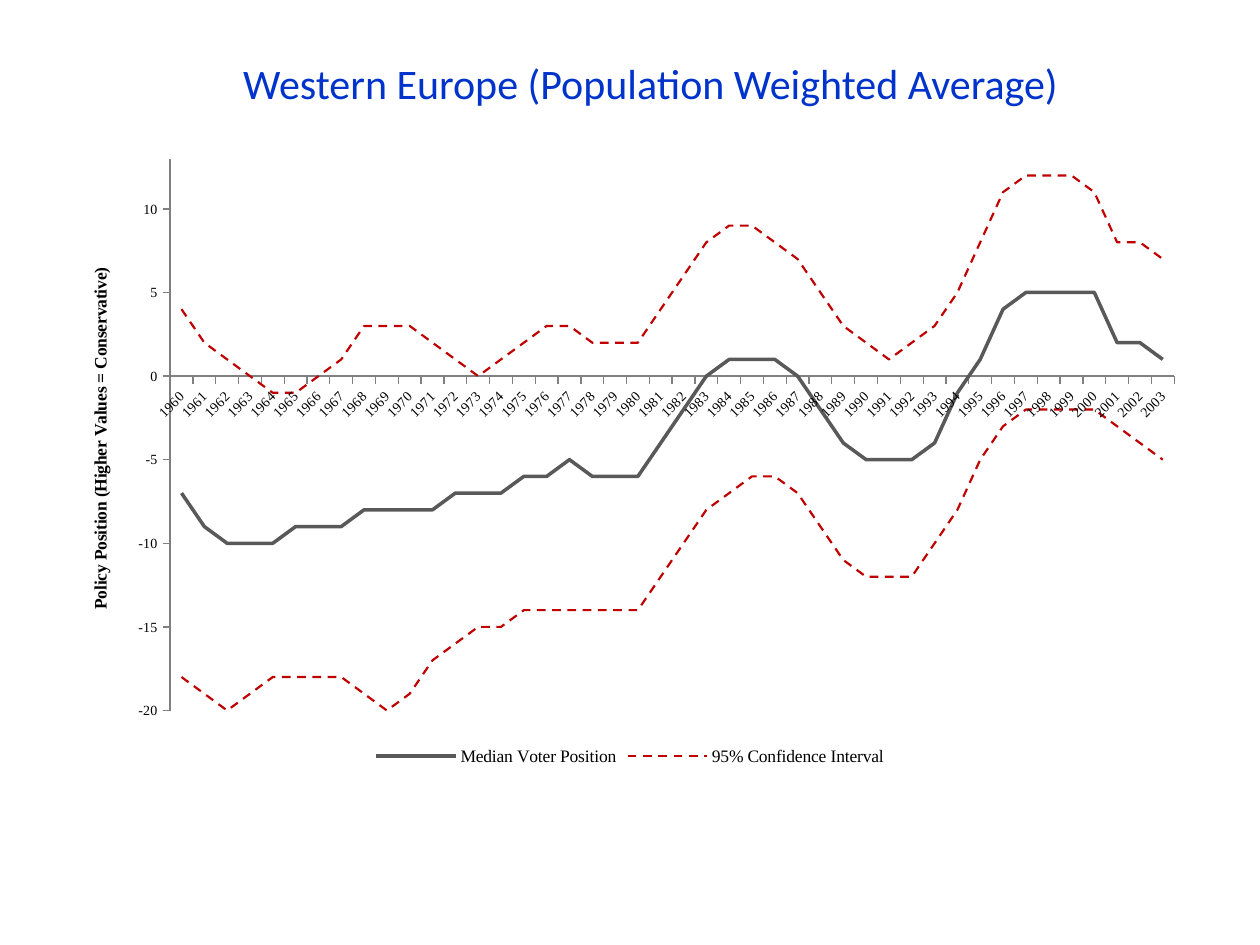
from pptx import Presentation
from pptx.chart.data import CategoryChartData
from pptx.dml.color import RGBColor
from pptx.enum.chart import XL_CHART_TYPE, XL_LEGEND_POSITION, XL_MARKER_STYLE, XL_TICK_MARK
from pptx.enum.dml import MSO_LINE
from pptx.enum.text import MSO_ANCHOR, PP_ALIGN
from pptx.oxml import parse_xml
from pptx.oxml.ns import nsdecls
from pptx.util import Inches, Pt

COLORS = {"title": "0033CC", "median": "595959", "interval": "C00000",
          "axis": "808080", "grid": "FFFFFF", "text": "000000"}
CHART_W, CHART_H = 9, 4.95
YEARS = [str(year) for year in range(1960, 2004)]
MEDIAN = [-7, -9, -10, -10, -10, -9, -9, -9, -8, -8, -8,
          -8, -7, -7, -7, -6, -6, -5, -6, -6, -6, -4,
          -2, 0, 1, 1, 1, 0, -2, -4, -5, -5, -5,
          -4, -1, 1, 4, 5, 5, 5, 5, 2, 2, 1]
LOWER = [-18, -19, -20, -19, -18, -18, -18, -18, -19, -20, -19,
         -17, -16, -15, -15, -14, -14, -14, -14, -14, -14, -12,
         -10, -8, -7, -6, -6, -7, -9, -11, -12, -12, -12,
         -10, -8, -5, -3, -2, -2, -2, -2, -3, -4, -5]
UPPER = [4, 2, 1, 0, -1, -1, 0, 1, 3, 3, 3,
         2, 1, 0, 1, 2, 3, 3, 2, 2, 2, 4,
         6, 8, 9, 9, 8, 7, 5, 3, 2, 1, 2,
         3, 5, 8, 11, 12, 12, 12, 11, 8, 8, 7]
SERIES = [("Median Voter Position", MEDIAN, "median", 2, None),
          ("95% Confidence Interval", LOWER, "interval", 1.25, MSO_LINE.DASH),
          ("Series 3", UPPER, "interval", 1.25, MSO_LINE.DASH)]


def color(name):
    return RGBColor.from_string(COLORS[name])


def style_font(font, name, size, color_name, bold=False):
    font.name, font.size, font.bold = name, Pt(size), bold
    font.color.rgb = color(color_name)


def style_line(line, color_name, width, dash=None):
    line.color.rgb = color(color_name)
    line.width = Pt(width)
    if dash:
        line.dash_style = dash


def add_title(slide, text):
    sp = slide.shapes.title
    sp.left, sp.top, sp.width, sp.height = map(Inches, (1.83, 0.41, 6.73, 0.51))
    tf = sp.text_frame
    tf.text = text
    tf.word_wrap = False
    tf.vertical_anchor = MSO_ANCHOR.TOP
    p = tf.paragraphs[0]
    p.alignment = PP_ALIGN.LEFT
    style_font(p.runs[0].font, "Calibri", 24, "title")


def style_axis(axis):
    axis.major_tick_mark = XL_TICK_MARK.OUTSIDE
    axis.minor_tick_mark = XL_TICK_MARK.NONE
    style_font(axis.tick_labels.font, "Times New Roman", 8, "text")
    style_line(axis.format.line, "axis", 0.75)


def style_value_axis(axis, title):
    style_axis(axis)
    axis.minimum_scale, axis.maximum_scale, axis.major_unit = -20, 13, 5
    axis.tick_labels.number_format = "0"
    axis.tick_labels.number_format_is_linked = False
    style_line(axis.major_gridlines.format.line, "grid", 0.75)
    tf = axis.axis_title.text_frame
    tf.text = title
    style_font(tf.paragraphs[0].runs[0].font, "Times New Roman", 10, "text", True)


def place_plot(chart, left, top, width, height):
    shares = {"x": left / CHART_W, "y": top / CHART_H,
              "w": width / CHART_W, "h": height / CHART_H}
    values = "".join(f'<c:{tag} val="{val}"/>' for tag, val in shares.items())
    layout = parse_xml(
        f'<c:layout {nsdecls("c")}><c:manualLayout><c:layoutTarget val="inner"/>'
        f'<c:xMode val="edge"/><c:yMode val="edge"/>{values}</c:manualLayout></c:layout>')
    area = chart._chartSpace.chart.plotArea
    for old in area.xpath("c:layout"):
        area.remove(old)
    area.insert(0, layout)


def add_legend(chart, hidden):
    chart.has_legend = True
    legend = chart.legend
    legend.position = XL_LEGEND_POSITION.BOTTOM
    legend.include_in_layout = False
    style_font(legend.font, "Times New Roman", 10, "text")
    entry = parse_xml(f'<c:legendEntry {nsdecls("c")}><c:idx val="{hidden}"/>'
                      '<c:delete val="1"/></c:legendEntry>')
    legend._element.insert(1, entry)


def add_line_chart(slide):
    data = CategoryChartData(number_format="0")
    data.categories = YEARS
    for name, values, *_ in SERIES:
        data.add_series(name, values)
    chart = slide.shapes.add_chart(
        XL_CHART_TYPE.LINE, *map(Inches, (0.5, 1.17, CHART_W, CHART_H)), data).chart
    chart.has_title = False
    style_font(chart.font, "Times New Roman", 10, "text")
    chart.plots[0].vary_by_categories = False
    for series, (_, _, color_name, width, dash) in zip(chart.plots[0].series, SERIES):
        series.smooth = False
        series.marker.style = XL_MARKER_STYLE.NONE
        style_line(series.format.line, color_name, width, dash)
    style_axis(chart.category_axis)
    chart.category_axis._element.txPr.bodyPr.set("rot", "-2700000")
    style_value_axis(chart.value_axis, "Policy Position (Higher Values = Conservative)")
    add_legend(chart, hidden=2)
    place_plot(chart, 0.85, 0.09, 7.97, 4.38)


def main():
    prs = Presentation()
    prs.slide_width, prs.slide_height = Inches(10), Inches(7.5)
    slide = prs.slides.add_slide(prs.slide_layouts[5])
    add_title(slide, "Western Europe (Population Weighted Average)")
    add_line_chart(slide)
    prs.save("out.pptx")


if __name__ == "__main__":
    main()
